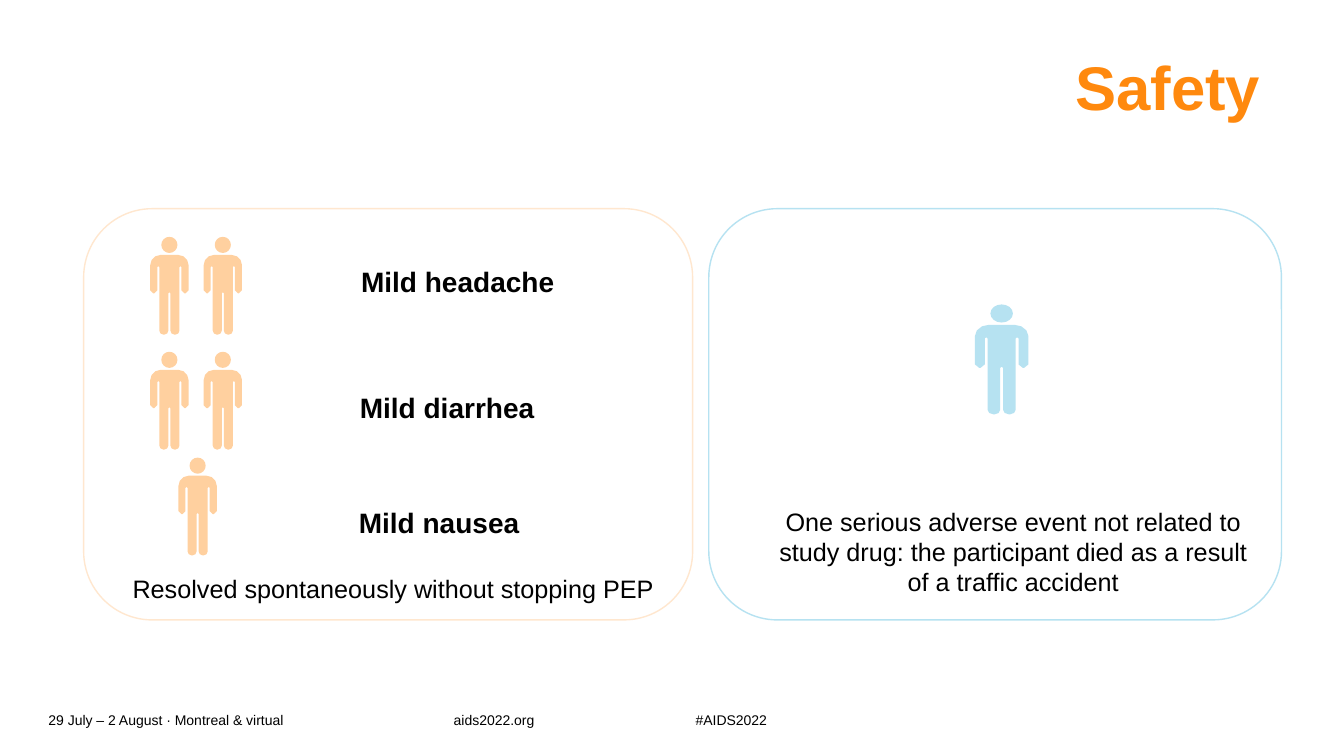
from dataclasses import dataclass
from math import ceil, cos, pi, sin

from pptx import Presentation
from pptx.dml.color import RGBColor
from pptx.enum.shapes import MSO_SHAPE
from pptx.enum.text import MSO_ANCHOR, MSO_AUTO_SIZE, PP_ALIGN
from pptx.util import Inches, Pt

ROUNDED = MSO_SHAPE.ROUNDED_RECTANGLE
LEFT, CENTER, RIGHT = PP_ALIGN.LEFT, PP_ALIGN.CENTER, PP_ALIGN.RIGHT
TOP, MIDDLE = MSO_ANCHOR.TOP, MSO_ANCHOR.MIDDLE
NO_FIT = MSO_AUTO_SIZE.NONE


@dataclass(frozen=True)
class Theme:
    font: str = "Arial"
    text: str = "000000"
    title: str = "FF890E"
    mild: str = "FFD09F"
    mild_line: str = "FFE7CF"
    serious: str = "B6E2F1"
    title_size: int = 44
    label_size: int = 20
    note_size: int = 18
    footer_size: int = 10


THEME = Theme()

# Right half of the body, from neck to crotch: x from the centre, y, corner radius
PERSON_SIZE = (0.38, 0.97)
HALF_BODY = [
    (0.19, 0.18, 0.1), (0.19, 0.56, 0.03), (0.12, 0.56, 0.03),
    (0.12, 0.29, 0.01), (0.1, 0.29, 0.01), (0.1, 0.97, 0.04),
    (0.01, 0.97, 0.04), (0.01, 0.55, 0.01),
]
HEAD_POINTS = 16


def set_text(sp, text, size, color=THEME.text, bold=False, align=LEFT,
             anchor=TOP, inset=None):
    tf = sp.text_frame
    tf.text = text
    frame = {"word_wrap": True, "auto_size": NO_FIT, "vertical_anchor": anchor}
    if inset is not None:
        for side in ("left", "top", "right", "bottom"):
            frame[f"margin_{side}"] = Inches(inset)
    for name, value in frame.items():
        setattr(tf, name, value)
    p = tf.paragraphs[0]
    p.alignment = align
    font = p.runs[0].font
    for name, value in {"name": THEME.font, "size": Pt(size), "bold": bold}.items():
        setattr(font, name, value)
    font.color.rgb = RGBColor.from_string(color)
    return p


def add_text(slide, box, text, size, **formats):
    sp = slide.shapes.add_textbox(*map(Inches, box))
    set_text(sp, text, size, **formats)


def round_corners(corners):
    """Replace each corner of a right-angled outline with a quarter arc."""
    points = []
    for i, (x, y, radius) in enumerate(corners):
        neighbours = corners[i - 1], corners[(i + 1) % len(corners)]
        (ax, ay), (bx, by) = [
            ((nx > x) - (nx < x), (ny > y) - (ny < y)) for nx, ny, _ in neighbours]
        steps = ceil(radius * 30)
        for step in range(steps + 1):
            t = step / steps * pi / 2
            back, ahead = radius * (1 - sin(t)), radius * (1 - cos(t))
            points.append((x + ax * back + bx * ahead, y + ay * back + by * ahead))
    return points


def add_person(slide, box, color):
    left, top, width, height = box
    scale_x, scale_y = width / PERSON_SIZE[0], height / PERSON_SIZE[1]

    def place(points):
        return [(Inches(left + width / 2 + x * scale_x), Inches(top + y * scale_y))
                for x, y in points]

    angles = [2 * pi * i / HEAD_POINTS for i in range(HEAD_POINTS)]
    head = place([(0.08 * cos(a), 0.08 + 0.08 * sin(a)) for a in angles])
    mirrored = [(-x, y, radius) for x, y, radius in reversed(HALF_BODY)]
    body = place(round_corners(HALF_BODY + mirrored))
    builder = slide.shapes.build_freeform(*head[0])
    builder.add_line_segments(head[1:], close=True)
    builder.move_to(*body[0])
    builder.add_line_segments(body[1:], close=True)
    sp = builder.convert_to_shape()
    sp.shadow.inherit = False
    sp.fill.solid()
    sp.fill.fore_color.rgb = RGBColor.from_string(color)
    sp.line.fill.background()


def add_panel(slide, box, color):
    sp = slide.shapes.add_shape(ROUNDED, *map(Inches, box))
    sp.shadow.inherit = False
    sp.fill.background()
    sp.line.color.rgb = RGBColor.from_string(color)
    sp.line.width = Pt(1)


def add_title(slide, box, text):
    sp = slide.shapes.title
    sp.left, sp.top, sp.width, sp.height = map(Inches, box)
    p = set_text(sp, text, THEME.title_size, color=THEME.title, bold=True,
                 align=RIGHT, inset=0)
    p.line_spacing = 0.9


def add_mild_events(slide, box):
    left, top, width, height = box
    add_panel(slide, box, THEME.mild_line)
    person_w, person_h = PERSON_SIZE
    # label, people's left edges and top, label's left, top and width
    events = [
        ("Mild headache", (0.66, 1.19), 0.28, (2.55, 0.51, 2.32)),
        ("Mild diarrhea", (0.66, 1.19), 1.42, (2.63, 1.75, 1.95)),
        ("Mild nausea", (0.94,), 2.47, (2.55, 2.9, 1.95)),
    ]
    for label, people, person_y, (x, y, label_w) in events:
        for person_x in people:
            add_person(slide, (left + person_x, top + person_y, person_w, person_h),
                       THEME.mild)
        add_text(slide, (left + x, top + y, label_w, 0.44), label,
                 THEME.label_size, bold=True, align=CENTER)
    add_text(slide, (left - 0.26, top + height - 0.51, width + 0.62, 0.4),
             "Resolved spontaneously without stopping PEP",
             THEME.note_size, align=CENTER)


def add_serious_event(slide, box):
    left, top, width, height = box
    add_panel(slide, box, THEME.serious)
    add_person(slide, (left + 2.64, top + 0.95, 0.53, 1.09), THEME.serious)
    add_text(slide, (left + 0.57, top + height - 1.18, width - 0.78, 1.01),
             "One serious adverse event not related to study drug: "
             "the participant died as a result of a traffic accident",
             THEME.note_size, align=CENTER)


def add_footer(slide, box):
    left, top, _, height = box
    items = [
        ("29 July – 2 August · Montreal & virtual", 0, 4.02),
        ("aids2022.org", 4.02, 1.93),
        ("#AIDS2022", 6.42, 1.93),
    ]
    for text, x, width in items:
        add_text(slide, (left + x, top, width, height), text, THEME.footer_size,
                 anchor=MIDDLE, inset=0)


def main():
    prs = Presentation()
    prs.slide_width, prs.slide_height = Inches(13.33), Inches(7.5)
    slide = prs.slides.add_slide(prs.slide_layouts.get_by_name("Title Only"))
    add_title(slide, (4.15, 0.57, 8.35, 1.34), "Safety")
    add_mild_events(slide, (0.83, 2.07, 6.04, 4.08))
    add_serious_event(slide, (7.03, 2.07, 5.68, 4.08))
    add_footer(slide, (0.48, 7.02, 8.35, 0.24))
    prs.save("out.pptx")


if __name__ == "__main__":
    main()
